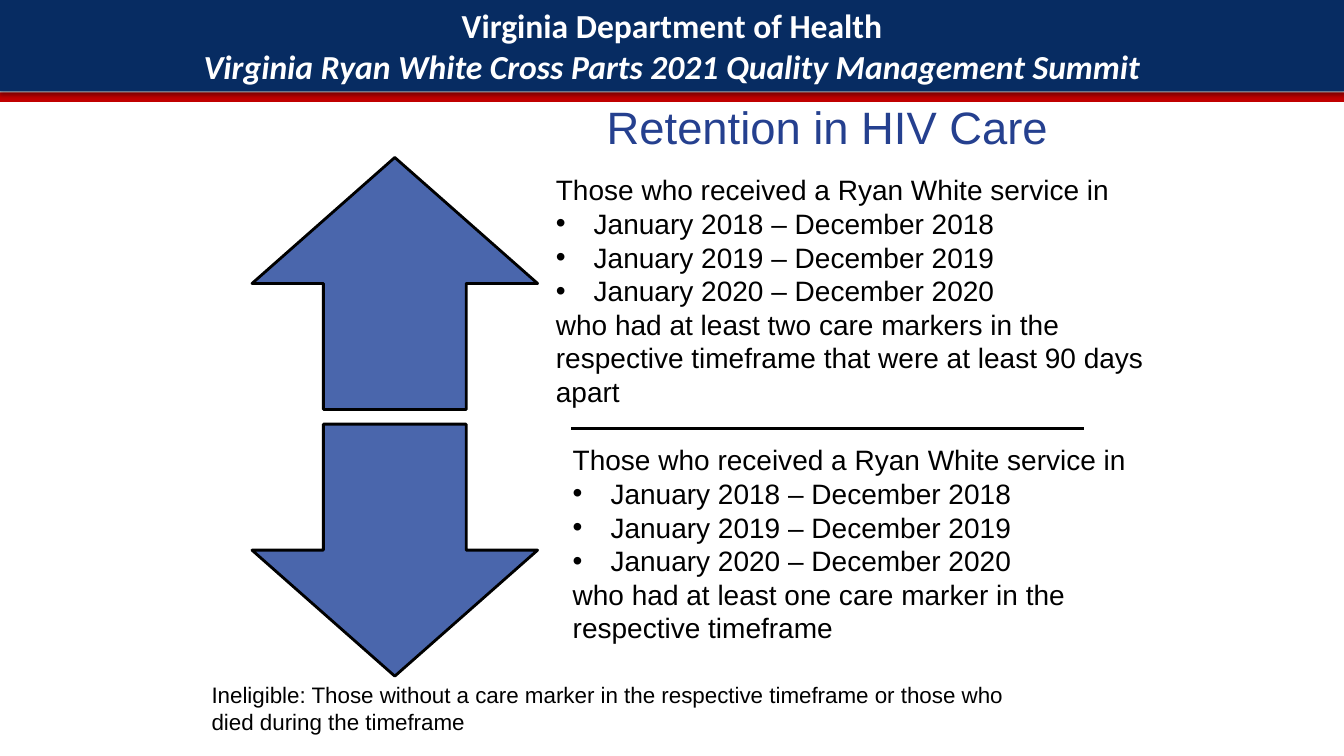
"""Build the slide that defines retention in HIV care."""
from lxml.etree import SubElement
from pptx import Presentation
from pptx.dml.color import RGBColor
from pptx.enum.shapes import MSO_CONNECTOR, MSO_SHAPE
from pptx.enum.text import MSO_ANCHOR, PP_ALIGN
from pptx.oxml.ns import qn
from pptx.util import Pt

PX = 9525
WIDE, HIGH = 1280, 720
INDENT = 36

NAVY = RGBColor(0x07, 0x2C, 0x62)
RED = RGBColor(0xC0, 0x00, 0x00)
BLUE = RGBColor(0x4A, 0x66, 0xAC)
INK = RGBColor(0x25, 0x40, 0x8F)
BLACK = RGBColor(0x00, 0x00, 0x00)
WHITE = RGBColor(0xFF, 0xFF, 0xFF)

HEADER = [
    "Virginia Department of Health",
    "Virginia Ryan White Cross Parts 2021 Quality Management Summit",
]
TITLE = "Retention in HIV Care"
INTRO = "Those who received a Ryan White service in"
YEARS = [2018, 2019, 2020]
RULES = [
    ((520, 160, 600, 236), "who had at least two care markers in the respective "
     "timeframe that were at least 90 days apart"),
    ((536, 417, 584, 204), "who had at least one care marker in the respective timeframe"),
]
NOTE = ("Ineligible: Those without a care marker in the respective timeframe "
        "or those who died during the timeframe")
ARROWS = [(MSO_SHAPE.UP_ARROW, 150), (MSO_SHAPE.DOWN_ARROW, 404)]

HEAD_FONT = {"name": "Calibri", "size": Pt(24), "bold": True}
TITLE_FONT = {"name": "Arial", "size": Pt(32.4)}
BODY_FONT = {"name": "Arial", "size": Pt(20)}
NOTE_FONT = {"name": "Arial", "size": Pt(16)}


def scale(box):
    return [n * PX for n in box]


def add_form(shapes, kind, box, fill, line=None):
    form = shapes.add_shape(kind, *scale(box))
    form.shadow.inherit = False
    form.fill.solid()
    form.fill.fore_color.rgb = fill
    if line is None:
        form.line.fill.background()
    else:
        form.line.color.rgb = line
        form.line.width = Pt(2)
    return form


def add_shade(form):
    effect = form._element.spPr.find(qn("a:effectLst"))
    shade = SubElement(effect, qn("a:outerShdw"), blurRad="39370", dist="22860",
                       dir="5400000", rotWithShape="0")
    tint = SubElement(shade, qn("a:srgbClr"), val=str(BLACK))
    SubElement(tint, qn("a:alpha"), val="35000")


def add_bullet(para):
    props = para._p.get_or_add_pPr()
    props.set("marL", str(INDENT * PX))
    props.set("indent", str(-INDENT * PX))
    SubElement(props, qn("a:buFont"), typeface="Arial")
    SubElement(props, qn("a:buChar"), char="•")


def write(form, lines, style, color, align=PP_ALIGN.LEFT, anchor=MSO_ANCHOR.TOP, dots=()):
    frame = form.text_frame
    frame.word_wrap = True
    frame.vertical_anchor = anchor
    for i, text in enumerate(lines):
        para = frame.paragraphs[0] if i == 0 else frame.add_paragraph()
        para.alignment = align
        if i in dots:
            add_bullet(para)
        run = para.add_run()
        run.text = text
        for key, value in style.items():
            setattr(run.font, key, value)
        run.font.color.rgb = color
    return frame


def main():
    deck = Presentation()
    deck.slide_width, deck.slide_height = WIDE * PX, HIGH * PX
    shapes = deck.slides.add_slide(deck.slide_layouts[6]).shapes

    add_form(shapes, MSO_SHAPE.RECTANGLE, (0, 88, WIDE, 9), RED)
    band = add_form(shapes, MSO_SHAPE.RECTANGLE, (0, 0, WIDE, 87), NAVY)
    add_shade(band)
    frame = write(band, HEADER, HEAD_FONT, WHITE, PP_ALIGN.CENTER, MSO_ANCHOR.MIDDLE)
    frame.paragraphs[1].runs[0].font.italic = True

    pair = shapes.add_group_shape()
    for kind, top in ARROWS:
        add_form(pair.shapes, kind, (240, top, 272, 240), BLUE, BLACK)

    title = shapes.add_textbox(*scale((520, 88, 536, 64)))
    write(title, [TITLE], TITLE_FONT, INK, PP_ALIGN.CENTER, MSO_ANCHOR.MIDDLE)

    spans = [f"January {year} – December {year}" for year in YEARS]
    for box, rule in RULES:
        write(shapes.add_textbox(*scale(box)), [INTRO, *spans, rule], BODY_FONT, BLACK,
              dots=range(1, len(spans) + 1))

    line = shapes.add_connector(MSO_CONNECTOR.STRAIGHT, *scale((544, 408, 1032, 408)))
    line.line.color.rgb = BLACK
    line.line.width = Pt(2.5)
    SubElement(line._element.spPr, qn("a:effectLst"))

    write(shapes.add_textbox(*scale((192, 644, 792, 61))), [NOTE], NOTE_FONT, BLACK)
    deck.save("out.pptx")


if __name__ == "__main__":
    main()
